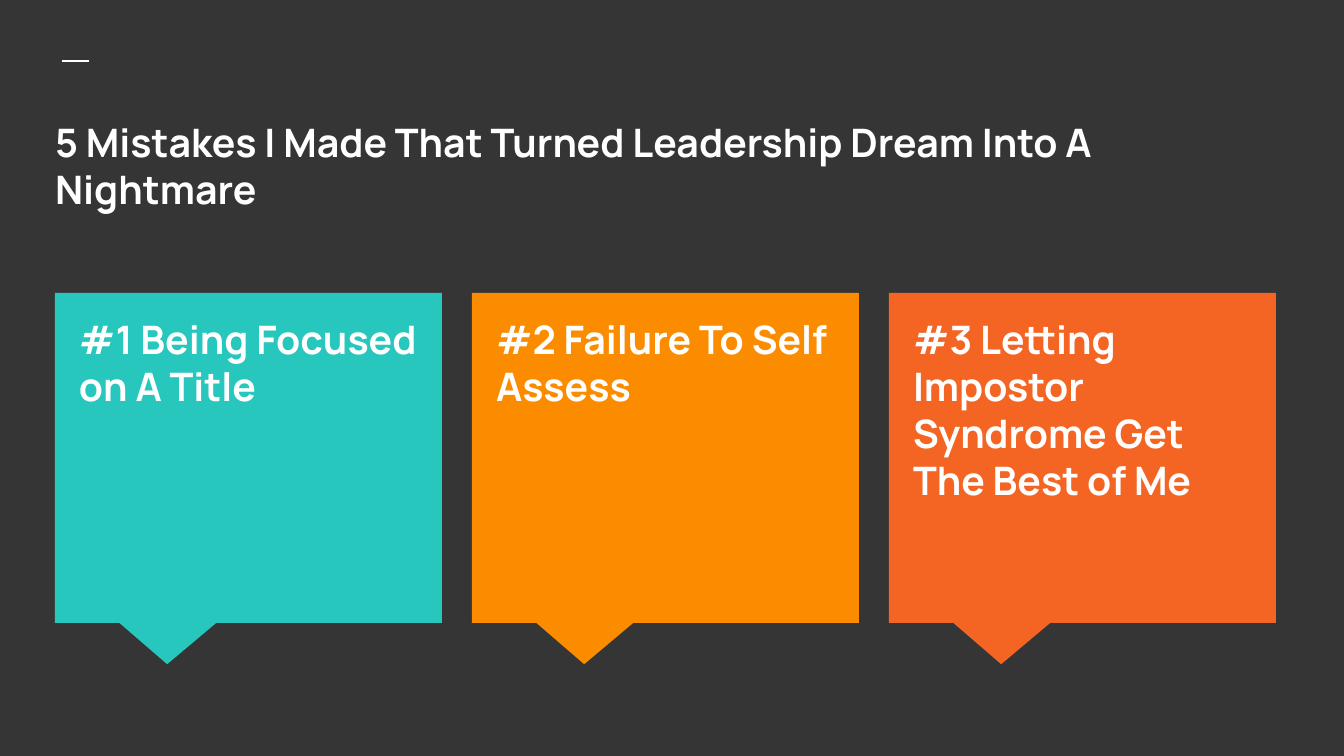
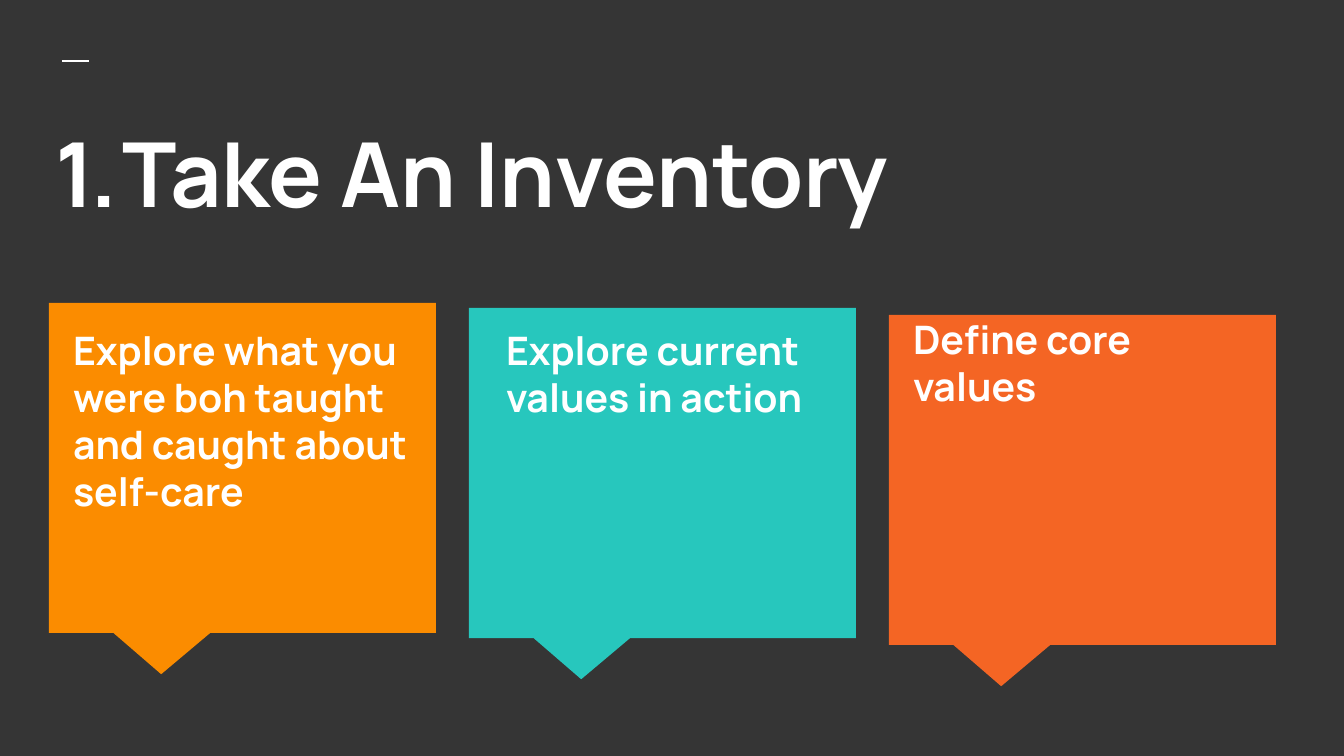
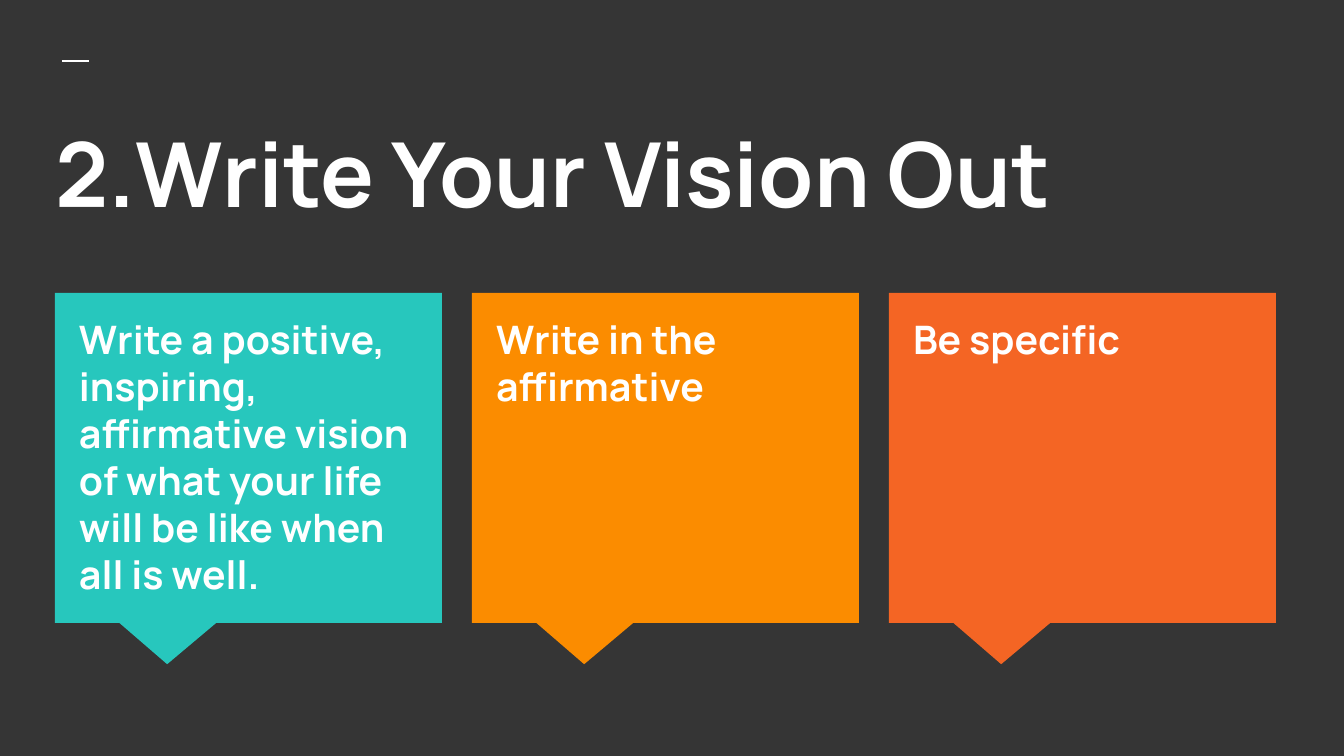
"""Build three leadership slides, each with a heading and three callout cards."""
from lxml.etree import SubElement
from pptx import Presentation
from pptx.dml.color import RGBColor
from pptx.enum.shapes import MSO_CONNECTOR as Connector, MSO_SHAPE as Shape
from pptx.enum.text import MSO_ANCHOR as Anchor, PP_ALIGN as Align
from pptx.oxml.ns import qn
from pptx.util import Pt

DARK = RGBColor(0x35, 0x35, 0x35)
WHITE = RGBColor(0xFF, 0xFF, 0xFF)
TEAL = RGBColor(0x27, 0xC7, 0xBD)
AMBER = RGBColor(0xFB, 0x8C, 0x00)
ORANGE = RGBColor(0xF4, 0x65, 0x24)
FONT = "Manrope"

EVEN_ROW = {"left": 55, "step": 417, "tops": (293, 293, 293),
            "text_lefts": (66, 483, 900), "text_tops": (302, 302, 302)}
STEPPED_ROW = {"left": 49, "step": 420, "tops": (303, 308, 315),
               "text_lefts": (60, 493, 900), "text_tops": (313, 313, 302)}

SLIDES = [
    {"title": "5 Mistakes I Made That Turned Leadership Dream Into A Nightmare",
     "size": 21, "number": None, "row": EVEN_ROW,
     "cards": [("#1 Being Focused on A Title", TEAL),
               ("#2 Failure To Self Assess", AMBER),
               ("#3 Letting Impostor Syndrome Get The Best of Me", ORANGE)]},
    {"title": "Take An Inventory", "size": 48, "number": 1, "row": STEPPED_ROW,
     "cards": [("Explore what you were boh taught and caught about self-care", AMBER),
               ("Explore current values in action", TEAL),
               ("Define core values", ORANGE)]},
    {"title": "Write Your Vision Out", "size": 48, "number": 2, "row": EVEN_ROW,
     "cards": [("Write a positive, inspiring, affirmative vision of what your life "
                "will be like when all is well.", TEAL),
               ("Write in the affirmative", AMBER),
               ("Be specific", ORANGE)]},
]

SLIDE_WIDTH, SLIDE_HEIGHT = 1344, 756
CARD_WIDTH, CARD_HEIGHT = 387, 330
TEXT_WIDTH, TEXT_HEIGHT = 364, 294
TITLE_BOX = (42, 105, 1267, 150)
DASH = (62, 61, 89, 61)
EMU_PER_PX = 9144000 / SLIDE_WIDTH


def px(*lengths):
    return [round(length * EMU_PER_PX) for length in lengths]


def add_dash(slide):
    dash = slide.shapes.add_connector(Connector.STRAIGHT, *px(*DASH))
    dash.line.color.rgb = WHITE
    dash.line.width = Pt(1.5)
    SubElement(dash.element.spPr, qn("a:effectLst"))


def add_heading(slide, text, box, size=21):
    frame = slide.shapes.add_textbox(*px(*box)).text_frame
    frame.word_wrap = True
    frame.vertical_anchor = Anchor.TOP
    [inset] = px(13)
    frame.margin_left = frame.margin_right = inset
    frame.margin_top = frame.margin_bottom = inset
    frame.text = text
    paragraph = frame.paragraphs[0]
    paragraph.alignment = Align.LEFT
    paragraph.space_after = Pt(12)
    font = paragraph.runs[0].font
    font.name, font.size, font.bold = FONT, Pt(size), True
    font.color.rgb = WHITE
    return paragraph


def number_paragraph(paragraph, start):
    paragraph.space_after = Pt(0)
    properties = paragraph._p.get_or_add_pPr()
    margin, indent = px(67, -78)
    properties.set("marL", str(margin))
    properties.set("indent", str(indent))
    color = SubElement(properties, qn("a:buClr"))
    SubElement(color, qn("a:srgbClr"), val=str(WHITE))
    SubElement(properties, qn("a:buFont"), typeface=FONT)
    SubElement(properties, qn("a:buAutoNum"), type="arabicPeriod", startAt=str(start))


def add_card(slide, left, top, color):
    card = slide.shapes.add_shape(Shape.RECTANGULAR_CALLOUT,
                                  *px(left, top, CARD_WIDTH, CARD_HEIGHT))
    card.adjustments[0], card.adjustments[1] = -0.21, 0.625
    card.fill.solid()
    card.fill.fore_color.rgb = color
    card.line.fill.background()
    card.shadow.inherit = False


def add_cards(slide, cards, row):
    for index, (_, color) in enumerate(cards):
        add_card(slide, row["left"] + index * row["step"], row["tops"][index], color)
    for (text, _), left, top in zip(cards, row["text_lefts"], row["text_tops"]):
        add_heading(slide, text, (left, top, TEXT_WIDTH, TEXT_HEIGHT))


def main():
    presentation = Presentation()
    presentation.slide_width, presentation.slide_height = px(SLIDE_WIDTH, SLIDE_HEIGHT)
    background = presentation.slide_master.background.fill
    background.solid()
    background.fore_color.rgb = DARK
    for content in SLIDES:
        slide = presentation.slides.add_slide(presentation.slide_layouts[6])
        add_dash(slide)
        title = add_heading(slide, content["title"], TITLE_BOX, content["size"])
        if content["number"]:
            number_paragraph(title, content["number"])
        add_cards(slide, content["cards"], content["row"])
    presentation.save("out.pptx")


if __name__ == "__main__":
    main()
